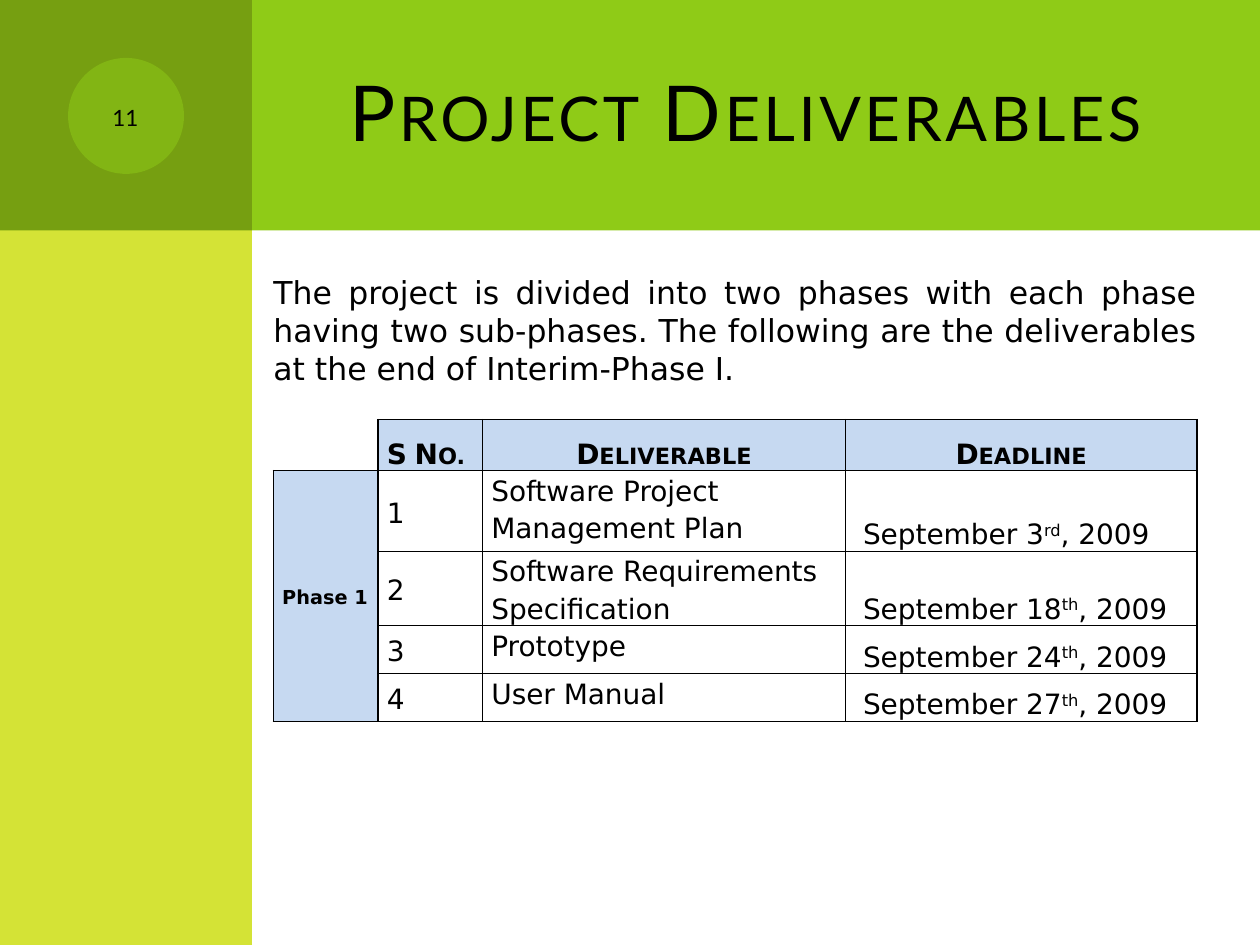
from lxml.etree import SubElement
from pptx import Presentation
from pptx.dml.color import RGBColor
from pptx.enum.shapes import MSO_SHAPE as Preset
from pptx.enum.text import MSO_ANCHOR as Anchor, MSO_AUTO_SIZE as AutoSize, PP_ALIGN as Align
from pptx.oxml.ns import qn
from pptx.util import Inches, Pt


def color(value):
    return RGBColor.from_string(value)


class DeliverablesSlide:
    """Holds the style and the current slide, and adds each kind of element."""

    heading_font = "Lato"
    body_font = "DejaVu Sans"
    ink = "000000"
    lime = "8FCB17"
    yellow = "D4E336"
    olive = "769F11"
    header_fill = "C6D9F1"

    def __init__(self, deck):
        self.slide = deck.slides.add_slide(deck.slide_layouts[5])

    def add_run(self, paragraph, text, size, font, bold=False, **attributes):
        run = paragraph.add_run()
        run.text = text
        run.font.size = Pt(size)
        run.font.name = font
        run.font.bold = bold
        run.font.color.rgb = color(self.ink)
        for key, value in attributes.items():
            run.font._element.set(key, value)

    def add_panel(self, preset, left, top, width, height, fill, opacity=100):
        panel = self.slide.shapes.add_shape(
            preset, Inches(left), Inches(top), Inches(width), Inches(height))
        panel.shadow.inherit = False
        panel.line.fill.background()
        panel.fill.solid()
        panel.fill.fore_color.rgb = color(fill)
        if opacity < 100:
            tint = panel.element.spPr.find(qn("a:solidFill"))[0]
            SubElement(tint, qn("a:alpha"), val=str(opacity * 1000))

    def set_title(self, text):
        title = self.slide.shapes.title
        title.left, title.top = Inches(2.67), Inches(0.25)
        title.width, title.height = Inches(6.83), Inches(1.25)
        title.element.getparent().append(title.element)
        frame = title.text_frame
        frame.auto_size = AutoSize.NONE
        frame.word_wrap = True
        frame.vertical_anchor = Anchor.MIDDLE
        frame.paragraphs[0].alignment = Align.RIGHT
        self.add_run(frame.paragraphs[0], text, 44, self.heading_font, cap="small", spc="200")

    def add_text(self, text, left, top, width, height, size, font, align, anchor,
                 insets=(0.1, 0.05, 0.1, 0.05), **attributes):
        box = self.slide.shapes.add_textbox(
            Inches(left), Inches(top), Inches(width), Inches(height))
        frame = box.text_frame
        frame.word_wrap = True
        frame.vertical_anchor = anchor
        (frame.margin_left, frame.margin_top,
         frame.margin_right, frame.margin_bottom) = map(Inches, insets)
        frame.paragraphs[0].alignment = align
        self.add_run(frame.paragraphs[0], text, size, font, **attributes)

    def add_table(self, left, top, widths, heights):
        table = self.slide.shapes.add_table(
            len(heights), len(widths), Inches(left), Inches(top),
            Inches(sum(widths)), Inches(sum(heights))).table
        table.first_row = table.horz_banding = False
        for column, width in zip(table.columns, widths):
            column.width = Inches(width)
        for row, height in zip(table.rows, heights):
            row.height = Inches(height)
        for cell in table.iter_cells():
            self.set_borders(cell, "LRTB")
            cell.fill.background()
        return table

    def set_borders(self, cell, visible):
        properties = cell._tc.get_or_add_tcPr()
        for line in list(properties):
            properties.remove(line)
        for side in "LRTB":
            line = SubElement(properties, qn(f"a:ln{side}"), w=str(Pt(1)))
            if side in visible:
                fill = SubElement(line, qn("a:solidFill"))
                SubElement(fill, qn("a:srgbClr"), val=self.ink)
            else:
                SubElement(line, qn("a:noFill"))

    def fill_cell(self, cell, parts, align, anchor, size=16, fill=None, indent=0.07, **style):
        cell.margin_left, cell.margin_right = Inches(indent), Inches(0.07)
        cell.margin_top = cell.margin_bottom = 0
        cell.vertical_anchor = anchor
        if fill:
            cell.fill.solid()
            cell.fill.fore_color.rgb = color(fill)
        paragraph = cell.text_frame.paragraphs[0]
        paragraph.alignment = align
        paragraph.line_spacing = 1.15
        paragraph.space_after = Pt(10)
        for index, part in enumerate(parts):
            raised = {"baseline": "30000"} if index == 1 else {}
            self.add_run(paragraph, part, size, self.body_font, **style, **raised)


def main():
    deck = Presentation()
    deck.slide_width, deck.slide_height = Inches(10), Inches(7.5)
    page = DeliverablesSlide(deck)

    page.add_panel(Preset.RECTANGLE, 0.5, 0, 9.5, 1.83, page.lime)
    page.add_panel(Preset.RECTANGLE, 0, 0, 2, 7.5, page.yellow)
    page.add_panel(Preset.RECTANGLE, 0, 0, 2, 1.83, page.olive)
    page.add_panel(Preset.OVAL, 0.54, 0.46, 0.92, 0.92, page.lime, opacity=50)
    page.set_title("Project Deliverables")

    schedule = page.add_table(2.17, 3.33, [0.83, 0.83, 2.88, 2.79],
                              [0.29, 0.64, 0.59, 0.38, 0.38])
    corner = schedule.cell(0, 0)
    page.set_borders(corner, "RB")
    corner.fill.background()
    headings = [("S No.", Align.JUSTIFY), ("Deliverable", Align.CENTER),
                ("Deadline", Align.CENTER)]
    for column, (heading, align) in enumerate(headings, 1):
        page.fill_cell(schedule.cell(0, column), [heading], align, Anchor.BOTTOM,
                       fill=page.header_fill, bold=True, cap="small")

    phase = schedule.cell(1, 0)
    phase.merge(schedule.cell(4, 0))
    page.fill_cell(phase, ["Phase 1"], Align.JUSTIFY, Anchor.MIDDLE, size=11,
                   fill=page.header_fill, bold=True)

    deliverables = [
        ("Software Project Management Plan", "3", "rd"),
        ("Software Requirements Specification", "18", "th"),
        ("Prototype", "24", "th"),
        ("User Manual", "27", "th"),
    ]
    for number, (deliverable, day, suffix) in enumerate(deliverables, 1):
        page.fill_cell(schedule.cell(number, 1), [str(number)], Align.JUSTIFY, Anchor.MIDDLE)
        page.fill_cell(schedule.cell(number, 2), [deliverable], Align.LEFT, Anchor.TOP)
        page.fill_cell(schedule.cell(number, 3), [f"September {day}", suffix, ", 2009"],
                       Align.LEFT, Anchor.BOTTOM, indent=0.14)

    page.add_text(
        "The project is divided into two phases with each phase having two sub-phases. "
        "The following are the deliverables at the end of Interim-Phase I.",
        2.17, 2, 7.33, 1.42, 18, page.body_font, Align.JUSTIFY, Anchor.TOP,
        insets=(0, 0.17, 0, 0.04))
    page.add_text("11", 0.58, 0.58, 0.83, 0.67, 16, page.heading_font,
                  Align.CENTER, Anchor.MIDDLE, cap="small")
    deck.save("out.pptx")


if __name__ == "__main__":
    main()
